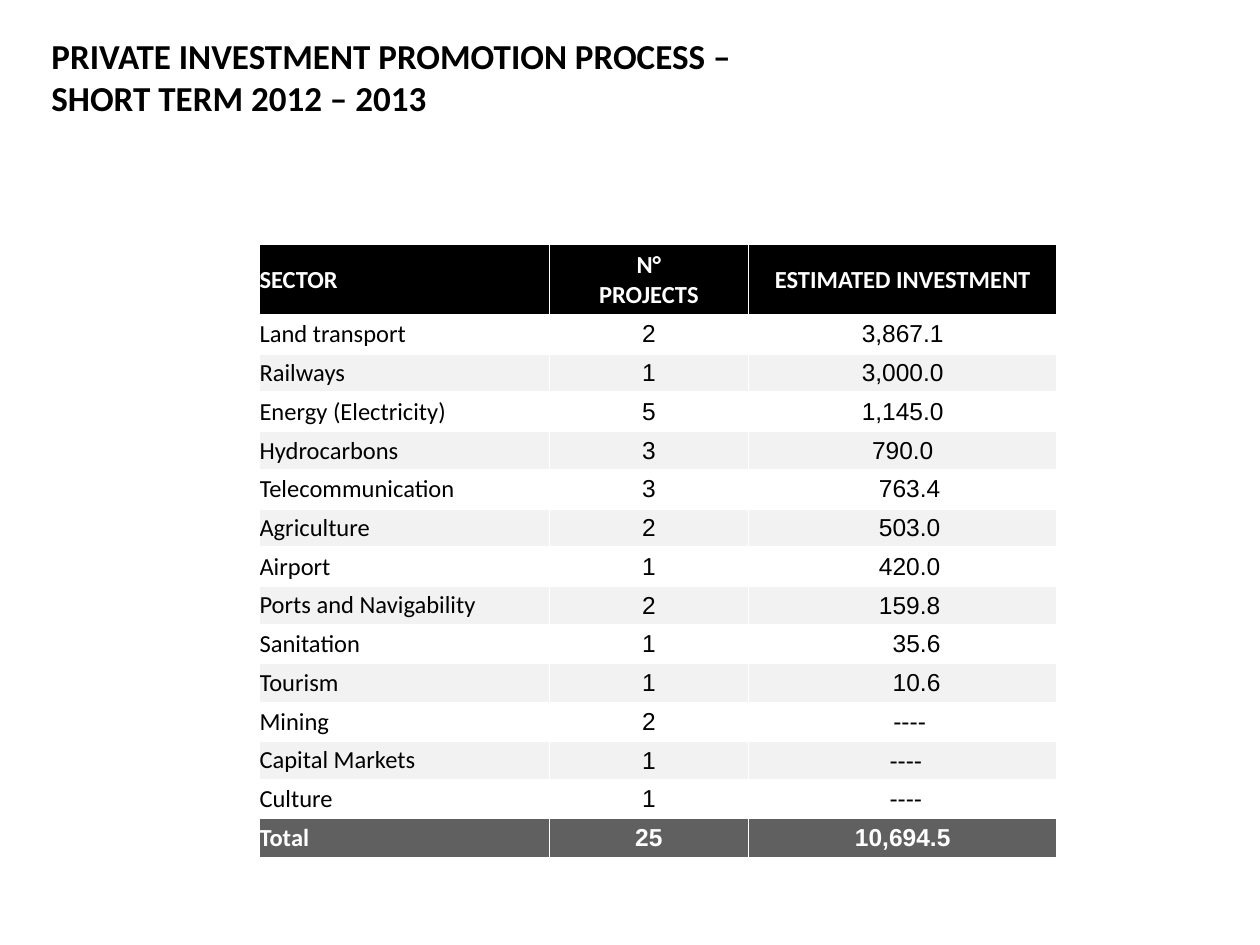
from lxml.etree import SubElement
from pptx import Presentation
from pptx.dml.color import RGBColor
from pptx.enum.text import MSO_ANCHOR, PP_ALIGN
from pptx.oxml.ns import qn
from pptx.util import Inches, Pt

TITLE = "PRIVATE INVESTMENT PROMOTION PROCESS – SHORT TERM 2012 – 2013"
HEADER = ("SECTOR", "N°\nPROJECTS", "ESTIMATED INVESTMENT")
SECTORS = [
    ("Land transport", "2", "3,867.1", 0),
    ("Railways", "1", "3,000.0", 0),
    ("Energy (Electricity)", "5", "1,145.0", 0),
    ("Hydrocarbons", "3", "790.0", 0),
    ("Telecommunication", "3", "763.4", 0.11),
    ("Agriculture", "2", "503.0", 0.11),
    ("Airport", "1", "420.0", 0.11),
    ("Ports and Navigability", "2", "159.8", 0.11),
    ("Sanitation", "1", "35.6", 0.22),
    ("Tourism", "1", "10.6", 0.22),
    ("Mining", "2", "----", 0.11),
    ("Capital Markets", "1", "----", 0.05),
    ("Culture", "1", "----", 0.05),
]
TOTAL = ("Total", "25", "10,694.5")
COLUMN_WIDTHS = (2.3, 1.58, 2.45)
HEADER_HEIGHT = 0.56
LAST_THICK_RULE = 8


def color(value):
    return RGBColor.from_string(value)


def format_text(text_frame, font_name, size, font_color, bold, alignment):
    for paragraph in text_frame.paragraphs:
        paragraph.alignment = alignment
        for run in paragraph.runs:
            run.font.name = font_name
            run.font.size = Pt(size)
            run.font.bold = bold
            run.font.color.rgb = color(font_color)


def set_borders(cell, widths):
    properties = cell._tc.get_or_add_tcPr()
    for side, width in zip("LRTB", widths):
        line = SubElement(properties, qn(f"a:ln{side}"), w=str(Pt(width)))
        fill = SubElement(line, qn("a:solidFill"))
        SubElement(fill, qn("a:srgbClr"), val="FFFFFF")


def add_title(slide, left, top, width, height):
    shape = slide.shapes.add_textbox(
        Inches(left), Inches(top), Inches(width), Inches(height))
    text_frame = shape.text_frame
    text_frame.word_wrap = True
    text_frame.vertical_anchor = MSO_ANCHOR.MIDDLE
    text_frame.text = TITLE
    format_text(text_frame, "Calibri", 20, "000000", True, PP_ALIGN.LEFT)


def fill_row(table, index, values, fill, font_color, bold, indent=0):
    top = 1.5 if 1 <= index <= LAST_THICK_RULE else 1
    bottom = 1.5 if index < LAST_THICK_RULE else 1
    for column, value in enumerate(values):
        cell = table.cell(index, column)
        cell.margin_left = Inches(indent if column == 2 else 0)
        cell.margin_right = cell.margin_top = cell.margin_bottom = 0
        cell.vertical_anchor = MSO_ANCHOR.MIDDLE
        cell.text_frame.text = value
        font_name = "Arial" if index and column else "Calibri"
        alignment = PP_ALIGN.CENTER if column else PP_ALIGN.LEFT
        format_text(cell.text_frame, font_name, 14, font_color, bold, alignment)
        set_borders(cell, (1, 1, top, bottom))
        cell.fill.solid()
        cell.fill.fore_color.rgb = color(fill)


def add_investment_table(slide, left, top, width, height):
    row_count = len(SECTORS) + 2
    table = slide.shapes.add_table(
        row_count, len(HEADER), Inches(left), Inches(top),
        Inches(width), Inches(height)).table
    for column, column_width in zip(table.columns, COLUMN_WIDTHS):
        column.width = Inches(column_width)
    body_height = (height - HEADER_HEIGHT) / (row_count - 1)
    for index, row in enumerate(table.rows):
        row.height = Inches(body_height if index else HEADER_HEIGHT)
    fill_row(table, 0, HEADER, "000000", "FFFFFF", True)
    for index, (*values, indent) in enumerate(SECTORS, 1):
        fill = "FFFFFF" if index % 2 else "F2F2F2"
        fill_row(table, index, values, fill, "000000", False, indent)
    fill_row(table, row_count - 1, TOTAL, "606060", "FFFFFF", True)


def main():
    presentation = Presentation()
    presentation.slide_width = Inches(10)
    presentation.slide_height = Inches(7.5)
    slide = presentation.slides.add_slide(presentation.slide_layouts[6])
    add_title(slide, 0.31, 0.39, 5.95, 0.44)
    add_investment_table(slide, 2.06, 1.94, 6.33, 4.87)
    presentation.save("out.pptx")


if __name__ == "__main__":
    main()
